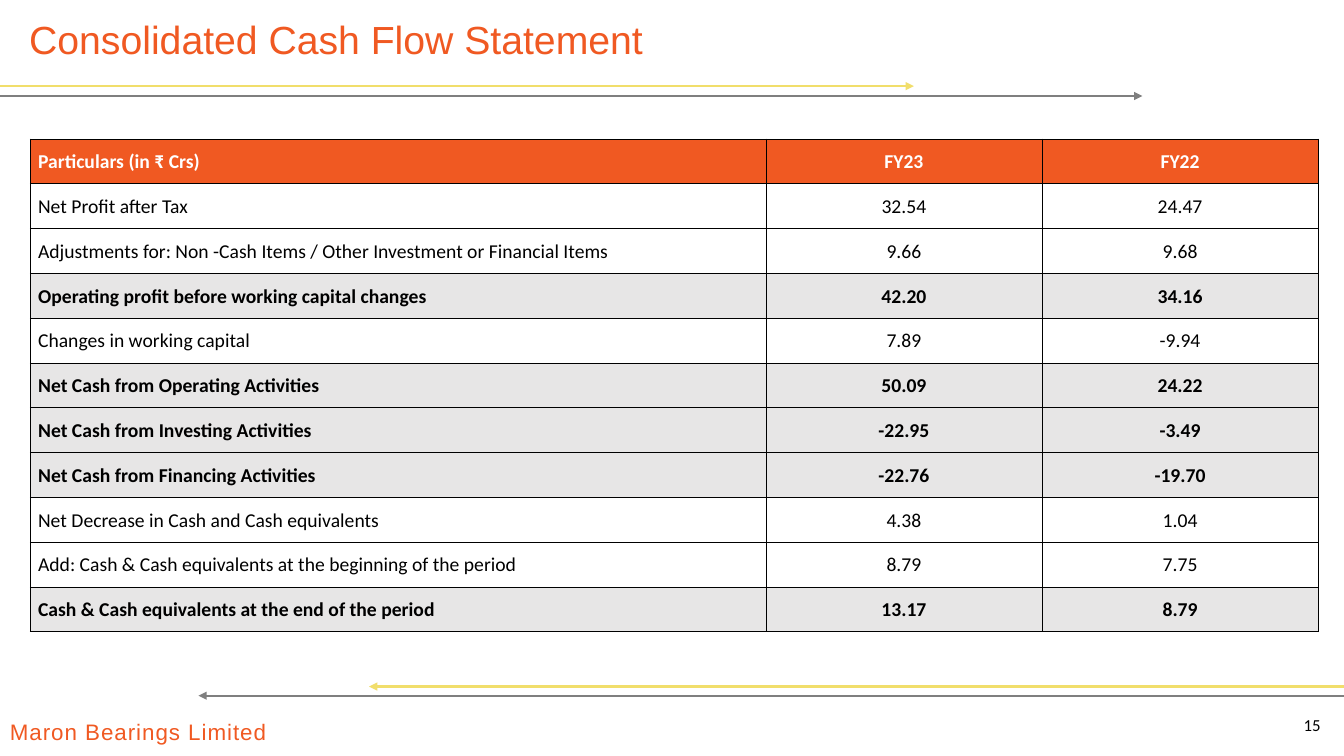
from lxml import etree
from pptx import Presentation
from pptx.dml.color import RGBColor
from pptx.enum import shapes, text
from pptx.oxml.ns import qn
from pptx.util import Cm, Pt

COLORS = {
    "orange": "F05922", "yellow": "F1DE6B", "gray": "7F7F7F",
    "band": "E7E6E6", "black": "000000", "white": "FFFFFF",
}
SLIDE_W, SLIDE_H = 33.87, 19.05

HEADINGS = ("Particulars (in ₹ Crs)", "FY23", "FY22")
# Label, FY23, FY22, subtotal
CASH_FLOWS = [
    ("Net Profit after Tax", "32.54", "24.47", False),
    ("Adjustments for: Non -Cash Items / Other Investment or Financial Items",
     "9.66", "9.68", False),
    ("Operating profit before working capital changes", "42.20", "34.16", True),
    ("Changes in working capital", "7.89", "-9.94", False),
    ("Net Cash from Operating Activities", "50.09", "24.22", True),
    ("Net Cash from Investing Activities", "-22.95", "-3.49", True),
    ("Net Cash from Financing Activities", "-22.76", "-19.70", True),
    ("Net Decrease in Cash and Cash equivalents", "4.38", "1.04", False),
    ("Add: Cash & Cash equivalents at the beginning of the period",
     "8.79", "7.75", False),
    ("Cash & Cash equivalents at the end of the period", "13.17", "8.79", True),
]


def rgb(name):
    return RGBColor.from_string(COLORS[name])


def write(frame, wording, size, color="black", font="Calibri", bold=False,
          align=text.PP_ALIGN.LEFT, spacing=None, line_spacing=None):
    paragraph = frame.paragraphs[0]
    paragraph.alignment = align
    if line_spacing:
        paragraph.line_spacing = line_spacing
    run = paragraph.add_run()
    run.text = wording
    run.font.size, run.font.name, run.font.bold = Pt(size), font, bold
    run.font.color.rgb = rgb(color)
    if spacing:
        run.font._element.set("spc", str(spacing))


def add_arrow(slide, start, end, y, color):
    arrow = slide.shapes.add_connector(
        shapes.MSO_CONNECTOR.STRAIGHT, Cm(start), Cm(y), Cm(end), Cm(y))
    arrow.line.color.rgb = rgb(color)
    arrow.line.width = Pt(1.5)
    etree.SubElement(arrow.line._get_or_add_ln(), qn("a:tailEnd"), type="triangle")
    etree.SubElement(arrow._element.spPr, qn("a:effectLst"))


def add_label(slide, box, wording, anchor, **style):
    label = slide.shapes.add_textbox(*map(Cm, box)).text_frame
    label.word_wrap = True
    label.vertical_anchor = anchor
    write(label, wording, **style)


def add_header(slide, left, top, width, height):
    title = slide.shapes.title
    title.left, title.top = Cm(left + 0.48), Cm(top + 0.38)
    title.width, title.height = Cm(21.11), Cm(1.37)
    title.text_frame.auto_size = text.MSO_AUTO_SIZE.NONE
    title.text_frame.vertical_anchor = text.MSO_ANCHOR.MIDDLE
    write(title.text_frame, "Consolidated Cash Flow Statement", 28, "orange",
          "Arial", line_spacing=0.9)
    add_arrow(slide, left, left + 0.68 * width, top + height - 0.25, "yellow")
    add_arrow(slide, left, left + 0.85 * width, top + height, "gray")


def add_borders(cell):
    for side in ("a:lnL", "a:lnR", "a:lnT", "a:lnB"):
        border = etree.SubElement(cell._tc.get_or_add_tcPr(), qn(side), w=str(Pt(0.5)))
        fill = etree.SubElement(border, qn("a:solidFill"))
        etree.SubElement(fill, qn("a:srgbClr"), val=COLORS["black"])


def fill_row(row, wordings, fill, color, bold):
    for column, (cell, wording) in enumerate(zip(row.cells, wordings)):
        add_borders(cell)
        cell.fill.solid()
        cell.fill.fore_color.rgb = rgb(fill)
        cell.vertical_anchor = text.MSO_ANCHOR.MIDDLE
        cell.margin_left = Cm(0.03 if column else 0.2)
        cell.margin_right = cell.margin_top = Cm(0.03)
        cell.margin_bottom = 0
        write(cell.text_frame, wording, 14, color, bold=bold,
              align=text.PP_ALIGN.CENTER if column else text.PP_ALIGN.LEFT)


def add_statement(slide, left, top, width, height):
    row_count = len(CASH_FLOWS) + 1
    statement = slide.shapes.add_table(
        row_count, len(HEADINGS), *map(Cm, (left, top, width, height))).table
    statement.horz_banding = False
    year_width = 6.96
    for column, column_width in zip(
            statement.columns, (width - 2 * year_width, year_width, year_width)):
        column.width = Cm(column_width)
    for row in statement.rows:
        row.height = Cm(height / row_count)

    heading_row, *flow_rows = statement.rows
    fill_row(heading_row, HEADINGS, "orange", "white", True)
    for row, (*wordings, subtotal) in zip(flow_rows, CASH_FLOWS):
        fill_row(row, wordings, "band" if subtotal else "white", "black", subtotal)


def add_footer(slide, left, top, width):
    right = left + width
    add_arrow(slide, right, left + 5, top + 0.23, "gray")
    add_arrow(slide, right, left + 9.3, top, "yellow")
    add_label(slide, (left, top + 0.68, 7.6, 0.94), "Maron Bearings Limited",
              text.MSO_ANCHOR.TOP, size=16, color="orange", font="Arial", spacing=70)
    add_label(slide, (right - 1.43, top + 0.45, 1.09, 1.02), "15",
              text.MSO_ANCHOR.MIDDLE, size=12, align=text.PP_ALIGN.RIGHT)


def main():
    prs = Presentation()
    prs.slide_width, prs.slide_height = Cm(SLIDE_W), Cm(SLIDE_H)
    slide = prs.slides.add_slide(prs.slide_layouts[5])
    add_header(slide, 0, 0, SLIDE_W, 2.42)
    add_statement(slide, 0.76, 3.5, 32.46, 12.42)
    add_footer(slide, 0, 17.3, SLIDE_W)
    prs.save("out.pptx")


if __name__ == "__main__":
    main()
